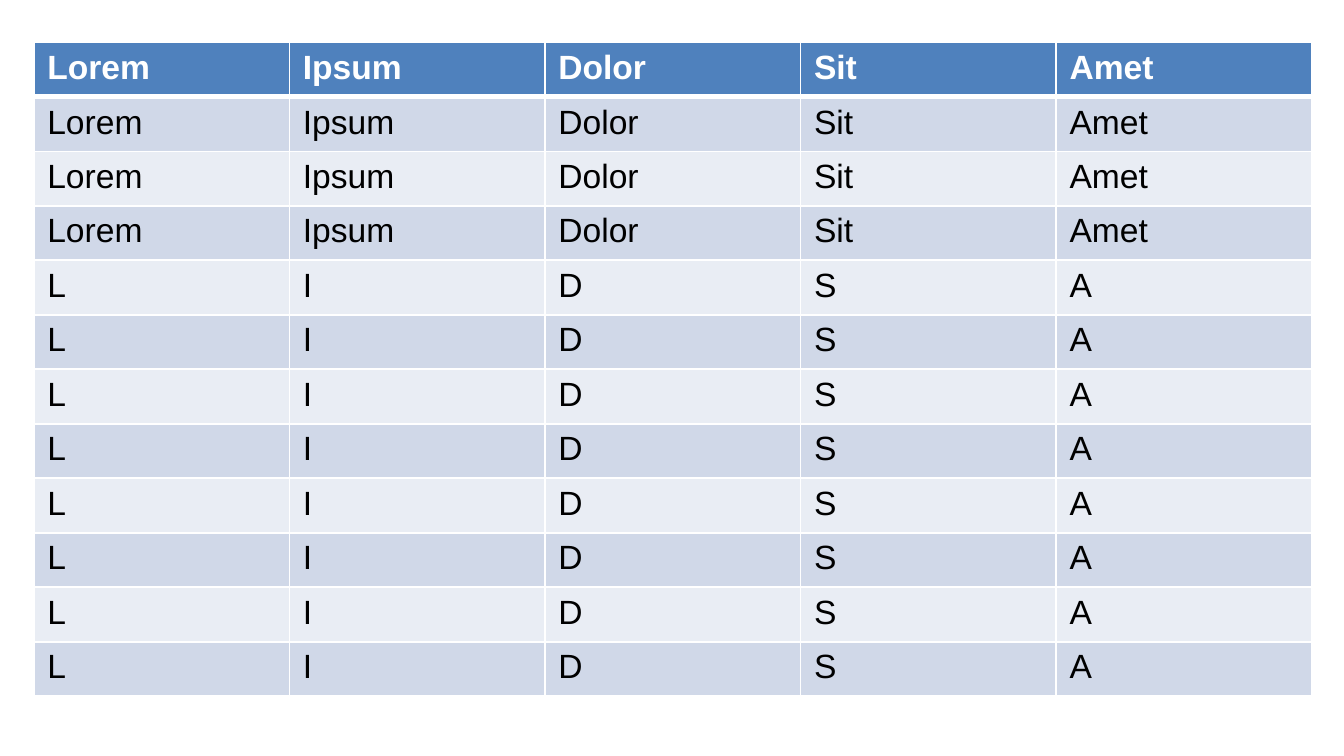
from lxml import etree
from pptx import Presentation
from pptx import util as u
from pptx.dml.color import RGBColor
from pptx.oxml import ns

HUES = {
    "head": "4F81BD",
    "odd": "D0D8E8",
    "even": "E9EDF4",
    "white": "FFFFFF",
    "black": "000000",
}
WORDS = ["Lorem", "Ipsum", "Dolor", "Sit", "Amet"]
ROWS = [WORDS] * 4 + [[word[0] for word in WORDS]] * 8


class Deck:
    """Hold the style and the current slide, and draw tables on it."""

    font = "Arial"
    size = u.Pt(18)
    thin = u.Pt(1)
    thick = u.Pt(3)

    def __init__(self, width, height):
        self.prs = Presentation()
        self.prs.slide_width = u.Cm(width)
        self.prs.slide_height = u.Cm(height)
        self.slide = self.prs.slides.add_slide(self.prs.slide_layouts[6])

    def hue(self, name):
        return RGBColor.from_string(HUES[name])

    def edge(self, cell, side, width):
        props = cell._tc.get_or_add_tcPr()
        line = etree.SubElement(props, ns.qn(f"a:ln{side}"), w=str(int(width)))
        fill = etree.SubElement(line, ns.qn("a:solidFill"))
        etree.SubElement(fill, ns.qn("a:srgbClr"), val=HUES["white"])

    def cell(self, cell, words, row):
        head = row == 0
        for side in "LRTB":
            heavy = (row, side) in [(0, "B"), (1, "T")]
            self.edge(cell, side, self.thick if heavy else self.thin)
        cell.fill.solid()
        band = "odd" if row % 2 else "even"
        cell.fill.fore_color.rgb = self.hue("head" if head else band)
        run = cell.text_frame.paragraphs[0].add_run()
        run.text = words
        run.font.name = self.font
        run.font.size = self.size
        run.font.bold = head
        run.font.color.rgb = self.hue("white" if head else "black")

    def table(self, rows, left, top, wide, high):
        count, span = len(rows), len(rows[0])
        frame = self.slide.shapes.add_table(
            count, span, u.Cm(left), u.Cm(top), u.Cm(wide * span), u.Cm(high * count)
        )
        grid = frame.table
        for col in grid.columns:
            col.width = u.Cm(wide)
        for row, line in enumerate(rows):
            grid.rows[row].height = u.Cm(high)
            for col, words in enumerate(line):
                self.cell(grid.cell(row, col), words, row)


def main():
    deck = Deck(25.4, 14.29)
    deck.table(ROWS, left=0.64, top=0.8, wide=4.83, high=1.03)
    deck.prs.save("out.pptx")


if __name__ == "__main__":
    main()
